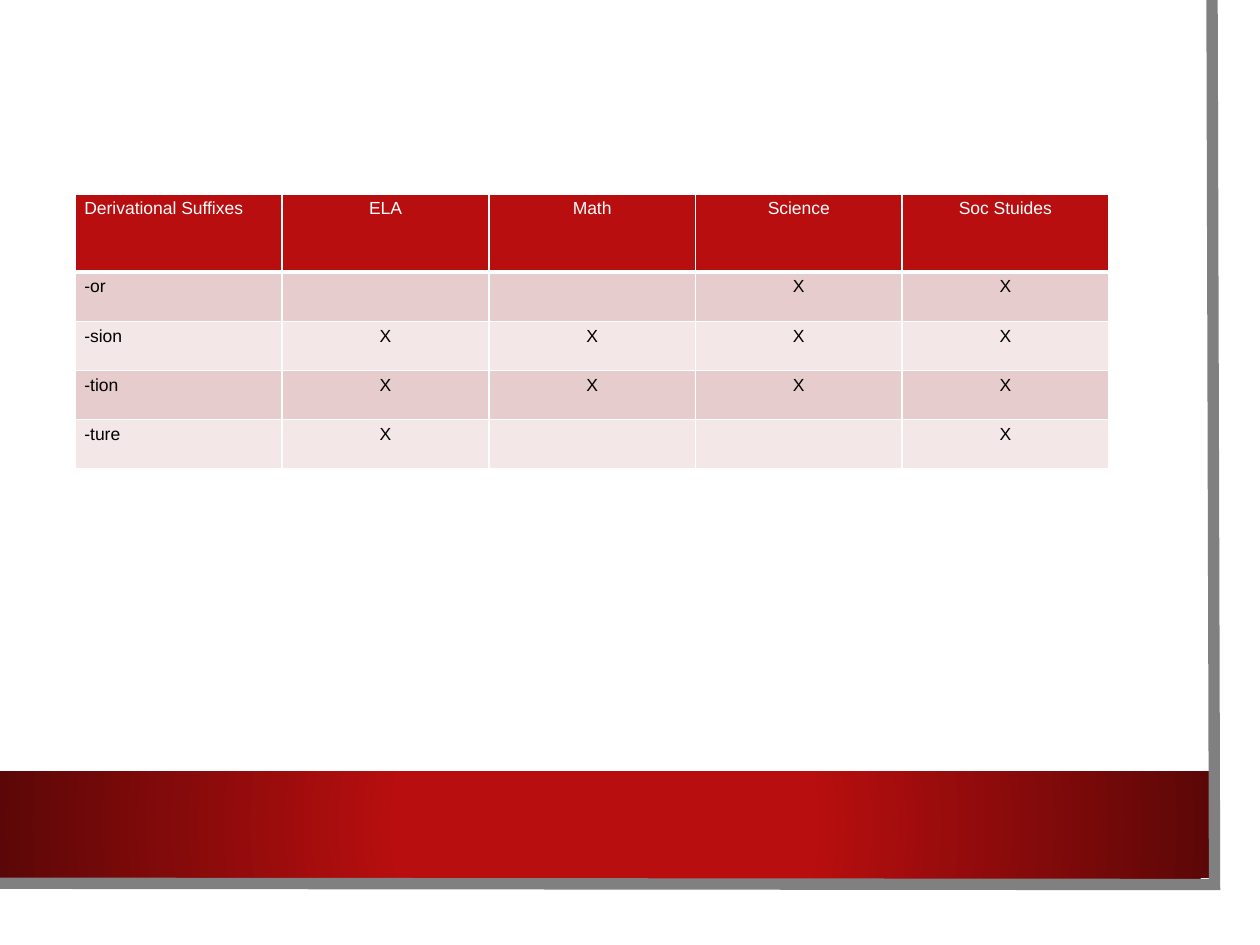
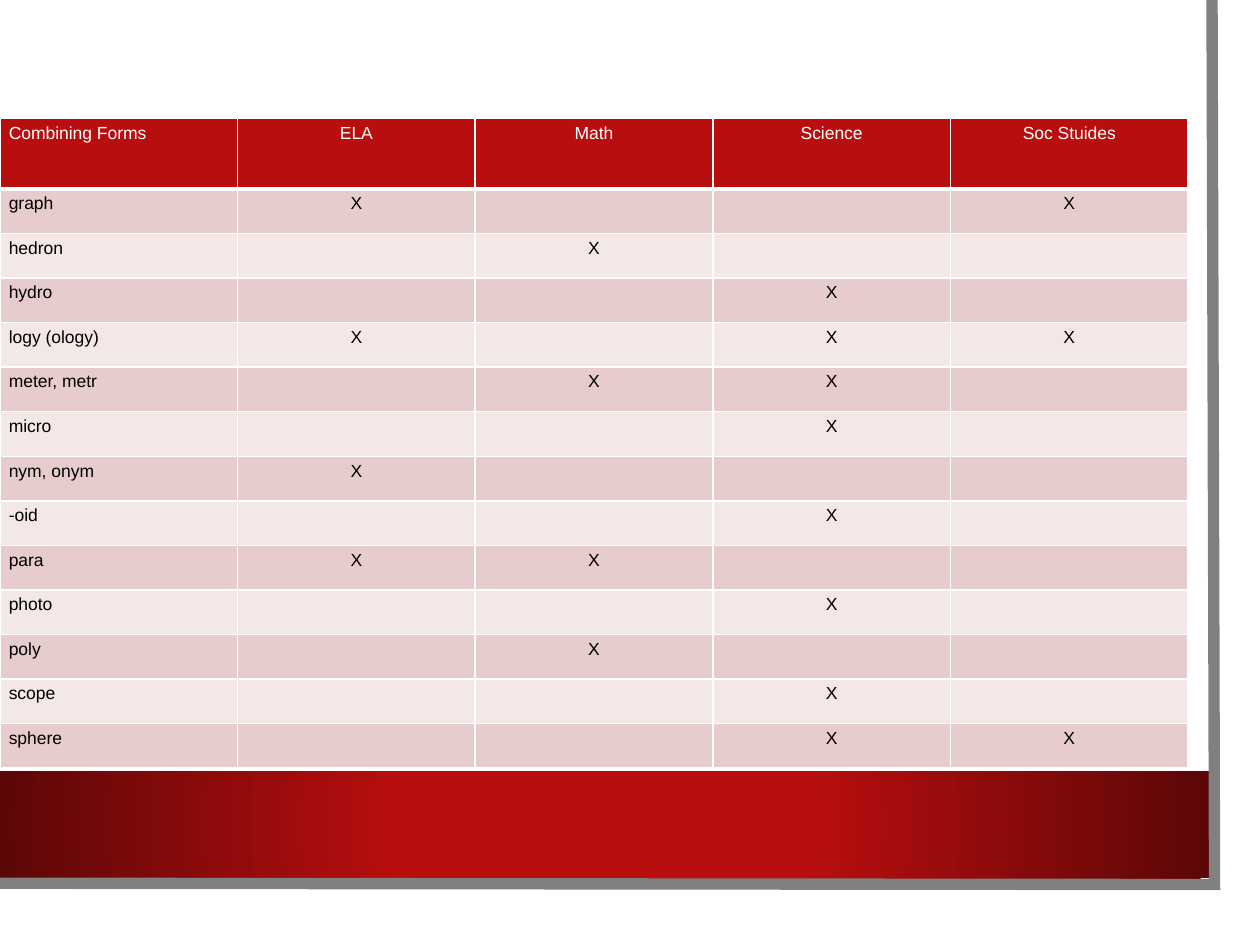
"""Build two slides that mark which school subjects use each word part."""
from dataclasses import dataclass

from lxml import etree
from pptx import Presentation
from pptx.dml.color import RGBColor
from pptx.enum.shapes import MSO_SHAPE
from pptx.enum.text import PP_ALIGN
from pptx.oxml.ns import qn
from pptx.util import Inches, Pt

RECTANGLE = MSO_SHAPE.RECTANGLE
LEFT, CENTER = PP_ALIGN.LEFT, PP_ALIGN.CENTER


@dataclass(frozen=True)
class Theme:
    red: str = "B80E0F"
    dark_red: str = "5C0707"
    gray: str = "808080"
    white: str = "FFFFFF"
    black: str = "000000"
    row_fills: tuple = ("E6CCCC", "F3E7E7")
    font: str = "Arial"
    text_size: float = 10
    frame_width: float = 6.5
    thin: float = 1
    thick: float = 3


theme = Theme()


def write_text(cell, text, *, color=theme.black, align=LEFT, size=theme.text_size):
    cell.margin_left = cell.margin_right = Inches(0.07)
    cell.margin_top = cell.margin_bottom = Inches(0.04)
    para = cell.text_frame.paragraphs[0]
    para.alignment = align
    if text:
        span = para.add_run()
        span.text = text
        span.font.name = theme.font
        span.font.size = Pt(size)
        span.font.bold = False
        span.font.color.rgb = RGBColor.from_string(color)
    else:
        etree.SubElement(para._p, qn("a:endParaRPr"), sz=str(int(size * 100)))


def paint_cell(cell, fill, bottom):
    properties = cell._tc.get_or_add_tcPr()
    for side in ("L", "R", "T", "B"):
        width = bottom if side == "B" else theme.thin
        line = etree.SubElement(properties, qn(f"a:ln{side}"), w=str(Pt(width)))
        solid = etree.SubElement(line, qn("a:solidFill"))
        etree.SubElement(solid, qn("a:srgbClr"), val=theme.white)
    cell.fill.solid()
    cell.fill.fore_color.rgb = RGBColor.from_string(fill)


subjects = ["ELA", "Math", "Science", "Soc Stuides"]
tables = [
    {
        "heading": "Derivational Suffixes",
        "place": (0.6, 1.54, 8.2, 2.18),
        "header_height": 0.62,
        "marks": {"-or": "--XX", "-sion": "XXXX", "-tion": "XXXX", "-ture": "X--X"},
    },
    {
        "heading": "Combining Forms",
        "place": (0, 0.94, 9.43, 5.16),
        "header_height": 0.56,
        "marks": {
            "graph": "X--X",
            "hedron": "-X--",
            "hydro": "--X-",
            "logy (ology)": "X-XX",
            "meter, metr": "-XX-",
            "micro": "--X-",
            "nym, onym": "X---",
            "-oid": "--X-",
            "para": "XX--",
            "photo": "--X-",
            "poly": "-X--",
            "scope": "--X-",
            "sphere": "--XX",
        },
    },
]

deck = Presentation()
deck.slide_width, deck.slide_height = Inches(10), Inches(7.5)
blank_layout = deck.slide_layouts[6]

for content in tables:
    page = deck.slides.add_slide(blank_layout)

    sheet = page.shapes.add_shape(RECTANGLE, 0, 0, Inches(9.83), Inches(7.27))
    sheet.fill.solid()
    sheet.fill.fore_color.rgb = RGBColor.from_string(theme.white)
    band = page.shapes.add_shape(RECTANGLE, 0, Inches(6.12), Inches(9.6), Inches(0.85))
    band.fill.gradient()
    stops = zip(band.fill.gradient_stops, ((0.34, theme.red), (1, theme.dark_red)))
    for stop, (position, color) in stops:
        stop.position = position
        stop.color.rgb = RGBColor.from_string(color)
    gradient = band._element.spPr.find(qn("a:gradFill"))
    gradient.remove(gradient.find(qn("a:lin")))
    circle = etree.SubElement(gradient, qn("a:path"), path="circle")
    center = {side: "50000" for side in "ltrb"}
    etree.SubElement(circle, qn("a:fillToRect"), **center)
    for box in (sheet, band):
        box.line.fill.background()
        box.shadow.inherit = False

    outline = page.shapes.build_freeform(Inches(9.62), 0)
    corners = [(9.64, 7.02), (-0.02, 7.01)]
    outline.add_line_segments([(Inches(x), Inches(y)) for x, y in corners], close=False)
    frame = outline.convert_to_shape()
    frame.fill.background()
    frame.shadow.inherit = False
    frame.line.color.rgb = RGBColor.from_string(theme.gray)
    frame.line.width = Pt(theme.frame_width)
    etree.SubElement(frame._element.spPr.find(qn("a:ln")), qn("a:miter"), lim="800000")

    marks = content["marks"]
    left, top, width, height = content["place"]
    header_height = content["header_height"]
    rows = [[content["heading"], *subjects]]
    rows += [[part, *used.replace("-", " ")] for part, used in marks.items()]
    grid = page.shapes.add_table(
        len(rows), len(rows[0]), Inches(left), Inches(top), Inches(width), Inches(height)
    ).table
    for column in grid.columns:
        column.width = Inches(width / len(rows[0]))
    for row_index, texts in enumerate(rows):
        is_header = row_index == 0
        row_height = header_height if is_header else (height - header_height) / len(marks)
        grid.rows[row_index].height = Inches(row_height)
        fill = theme.red if is_header else theme.row_fills[(row_index - 1) % 2]
        for column_index, text in enumerate(texts):
            cell = grid.cell(row_index, column_index)
            write_text(
                cell,
                text.strip(),
                color=theme.white if is_header else theme.black,
                align=CENTER if column_index else LEFT,
            )
            paint_cell(cell, fill, theme.thick if is_header else theme.thin)

deck.save("out.pptx")
